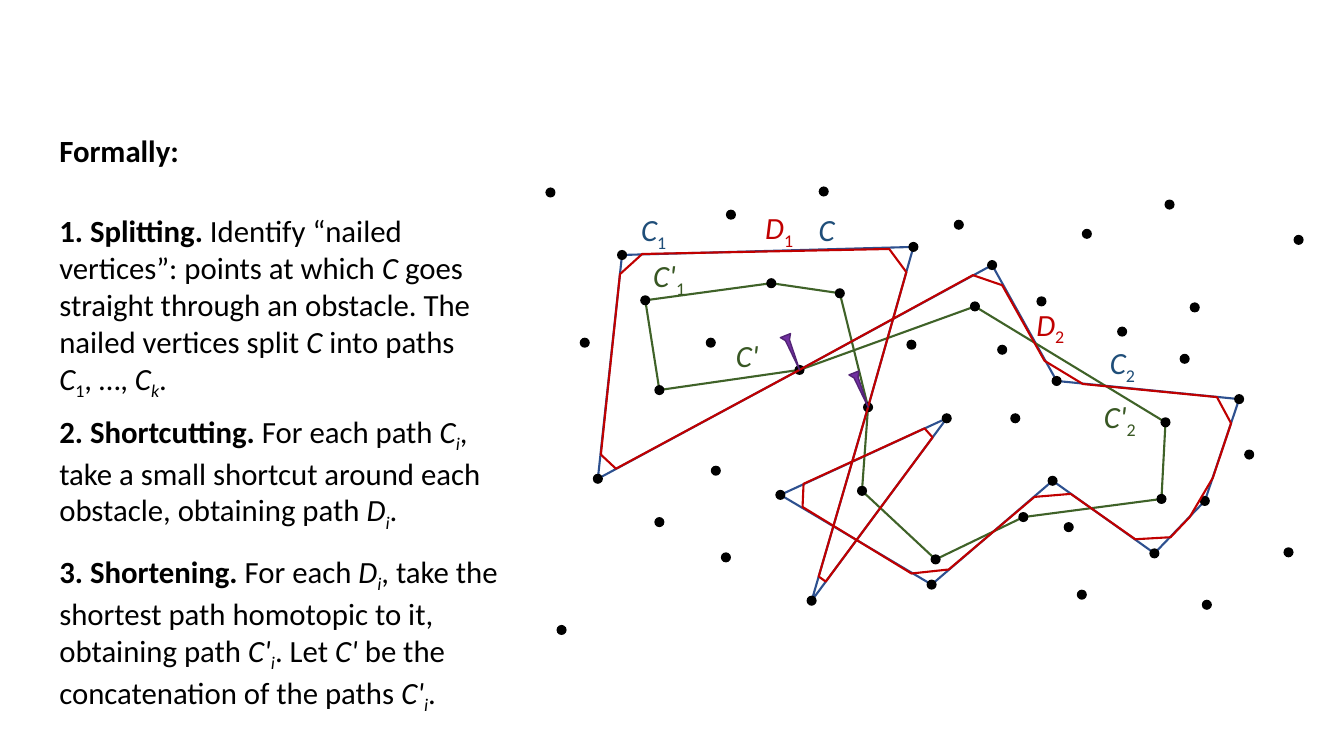
from pptx import Presentation
from pptx.dml.color import RGBColor
from pptx.enum.shapes import MSO_SHAPE
from pptx.enum.text import MSO_AUTO_SIZE
from pptx.util import Inches, Pt

OVAL = MSO_SHAPE.OVAL
FIT_SHAPE = MSO_AUTO_SIZE.SHAPE_TO_FIT_TEXT

BLACK = RGBColor(0x00, 0x00, 0x00)
CURVE_BLUE = RGBColor(0x2D, 0x50, 0x8F)
CURVE_GREEN = RGBColor(0x3F, 0x62, 0x28)
RED = RGBColor(0xC0, 0x00, 0x00)
LABEL_BLUE = RGBColor(0x1F, 0x4E, 0x79)
LABEL_GREEN = RGBColor(0x38, 0x57, 0x23)
NAIL_FILL = RGBColor(0x70, 0x30, 0xA0)
NAIL_LINE = RGBColor(0x53, 0x24, 0x76)

PLAIN, BOLD, ITALIC, SUB, ITALIC_SUB = "", "b", "i", "s", "is"
COLUMNS, ROWS = 13.33, 7.5
TEXT_LEFT = 0.49
LABEL_HEIGHT = 0.47

LEFT_NAIL, RIGHT_NAIL = (7.93, 3.67), (8.61, 4.04)
NAIL_OUTLINE = [(0, 0), (-0.1, -0.3), (-0.09, -0.36), (-0.19, -0.32), (-0.14, -0.29)]

CURVES = [
    [LEFT_NAIL, (9.84, 2.63), (10.48, 3.78), (12.29, 3.96), (11.95, 4.97), (11.45, 5.49),
     (10.44, 4.77), (9.24, 5.8), (7.74, 4.91), (9.39, 4.15), (8.05, 5.96), RIGHT_NAIL],
    [RIGHT_NAIL, (9.06, 2.45), (6.17, 2.53), (5.93, 4.75), LEFT_NAIL],
]
SHORTENED = [
    [LEFT_NAIL, (9.67, 3.04), (11.56, 4.19), (11.52, 4.95), (10.15, 5.13), (9.28, 5.55),
     (8.55, 4.87), RIGHT_NAIL],
    [LEFT_NAIL, (6.54, 3.87), (6.4, 2.98), (7.65, 2.81), (8.33, 2.91), RIGHT_NAIL],
]
SHORTCUTS = [
    [RIGHT_NAIL, (8.99, 2.7), (8.82, 2.47), (6.37, 2.52), (6.15, 2.72), (5.96, 4.51),
     (6.11, 4.65), LEFT_NAIL],
    [LEFT_NAIL, (9.65, 2.73), (9.94, 2.83), (10.36, 3.58), (10.74, 3.81), (12.07, 3.94),
     (12.21, 4.2), (12.03, 4.74), (11.8, 5.13), (11.61, 5.33), (11.26, 5.35), (10.62, 4.9),
     (10.26, 4.93), (9.41, 5.65), (9.04, 5.69), (7.96, 5.03), (7.97, 4.8), (9.17, 4.25),
     (9.25, 4.34), (8.19, 5.77), (8.12, 5.72), RIGHT_NAIL],
]
FREE_OBSTACLES = [
    (5.57, 6.25), (9.04, 3.42), (10.07, 4.15), (9.94, 3.47), (10.33, 2.99), (11.13, 3.29),
    (11.85, 3.05), (11.75, 3.56), (12.39, 4.51), (10.6, 5.23), (6.54, 5.18), (7.1, 4.67),
    (7.2, 5.53), (10.73, 5.9), (11.97, 6), (5.8, 3.4), (5.46, 1.91), (7.25, 2.13),
    (8.17, 1.9), (10.78, 2.32), (11.6, 2.03), (7.05, 3.4), (9.51, 2.23), (12.88, 2.38),
    (12.78, 5.48),
]
STEPS = [
    (2.05, 4.75, 1.95, [
        [("1. Splitting. ", BOLD), ("Identify “nailed vertices”: points at which ", PLAIN),
         ("C", ITALIC), (" goes straight through an obstacle. The nailed vertices split ", PLAIN),
         ("C", ITALIC), (" into paths", PLAIN)],
        [("C", ITALIC), ("1", SUB), (", …, ", PLAIN), ("C", ITALIC), ("k", ITALIC_SUB),
         (".", PLAIN)]]),
    (4.04, 4.47, 1.21, [
        [("2. Shortcutting. ", BOLD), ("For each path ", PLAIN), ("C", ITALIC),
         ("i", ITALIC_SUB), (", take a small shortcut around each obstacle, obtaining path ", PLAIN),
         ("D", ITALIC), ("i", ITALIC_SUB), (".", PLAIN)]]),
    (5.43, 4.58, 1.58, [
        [("3. Shortening. ", BOLD), ("For each ", PLAIN), ("D", ITALIC), ("i", ITALIC_SUB),
         (", take the shortest path homotopic to it, obtaining path ", PLAIN),
         ("C'", ITALIC), ("i", ITALIC_SUB), (". Let ", PLAIN), ("C'", ITALIC),
         (" be the concatenation of the paths ", PLAIN), ("C'", ITALIC), ("i", ITALIC_SUB),
         (".", PLAIN)]]),
]
LABELS = [
    (6.26, 2.04, 0.54, "C", "1", LABEL_BLUE),
    (10.91, 3.36, 0.54, "C", "2", LABEL_BLUE),
    (7.49, 2.02, 0.54, "D", "1", RED),
    (10.18, 2.98, 0.54, "D", "2", RED),
    (6.38, 2.5, 0.67, "C'", "1", LABEL_GREEN),
    (10.85, 3.9, 0.67, "C'", "2", LABEL_GREEN),
    (8.02, 2.04, 0.54, "C", "", LABEL_BLUE),
    (7.2, 3.29, 0.54, "C'", "", LABEL_GREEN),
]


class Sketch:
    """Draws on one slide, with lengths in columns and rows of a one-inch grid."""

    font_name = "Calibri"
    font_size = Pt(22)
    dot_size = 0.1

    def __init__(self, presentation):
        self.slide = presentation.slides.add_slide(presentation.slide_layouts[6])
        self.shapes = self.slide.shapes

    def outline(self, points, color, width=1.5, fill=None):
        corners = [(Inches(column), Inches(row)) for column, row in points]
        builder = self.shapes.build_freeform(*corners[0])
        builder.add_line_segments(corners[1:], close=fill is not None)
        shape = builder.convert_to_shape()
        shape.shadow.inherit = False
        shape.line.color.rgb = color
        shape.line.width = Pt(width)
        if fill is None:
            shape.fill.background()
        else:
            shape.fill.solid()
            shape.fill.fore_color.rgb = fill

    def dot(self, column, row):
        size = Inches(self.dot_size)
        shape = self.shapes.add_shape(
            OVAL, Inches(column) - size // 2, Inches(row) - size // 2, size, size)
        shape.shadow.inherit = False
        shape.fill.solid()
        shape.fill.fore_color.rgb = BLACK
        shape.line.fill.background()

    def text(self, column, row, width, height, paragraphs, color=BLACK):
        box = self.shapes.add_textbox(*map(Inches, (column, row, width, height)))
        frame = box.text_frame
        frame.word_wrap = True
        frame.auto_size = FIT_SHAPE
        for index, runs in enumerate(paragraphs):
            paragraph = frame.add_paragraph() if index else frame.paragraphs[0]
            paragraph.font.name = self.font_name
            paragraph.font.size = self.font_size
            paragraph.font.color.rgb = color
            for words, style in runs:
                run = paragraph.add_run()
                run.text = words
                target = run.font if len(runs) > 1 else paragraph.font
                if BOLD in style:
                    target.bold = True
                if ITALIC in style:
                    target.italic = True
                if SUB in style:
                    run._r.get_or_add_rPr().set("baseline", "-25000")


def main():
    presentation = Presentation()
    presentation.slide_width = Inches(COLUMNS)
    presentation.slide_height = Inches(ROWS)
    sketch = Sketch(presentation)

    for paths, color in ((CURVES, CURVE_BLUE), (SHORTENED, CURVE_GREEN)):
        for points in paths:
            sketch.outline(points, color)
    vertices = {point for points in CURVES + SHORTENED for point in points}
    for column, row in sorted(vertices) + FREE_OBSTACLES:
        sketch.dot(column, row)

    for row, width, height, paragraphs in STEPS:
        sketch.text(TEXT_LEFT, row, width, height, paragraphs)
    for column, row, width, letter, index, color in LABELS:
        runs = [(letter, ITALIC)] + ([(index, SUB)] if index else [])
        sketch.text(column, row, width, LABEL_HEIGHT, [runs], color)

    for points in SHORTCUTS:
        sketch.outline(points, RED)
    sketch.text(TEXT_LEFT, 1.26, 4.75, LABEL_HEIGHT, [[("Formally:", BOLD)]])
    for column, row in (LEFT_NAIL, RIGHT_NAIL):
        points = [(column + across, row + down) for across, down in NAIL_OUTLINE]
        sketch.outline(points, NAIL_LINE, 1, NAIL_FILL)

    presentation.save("out.pptx")


if __name__ == "__main__":
    main()
